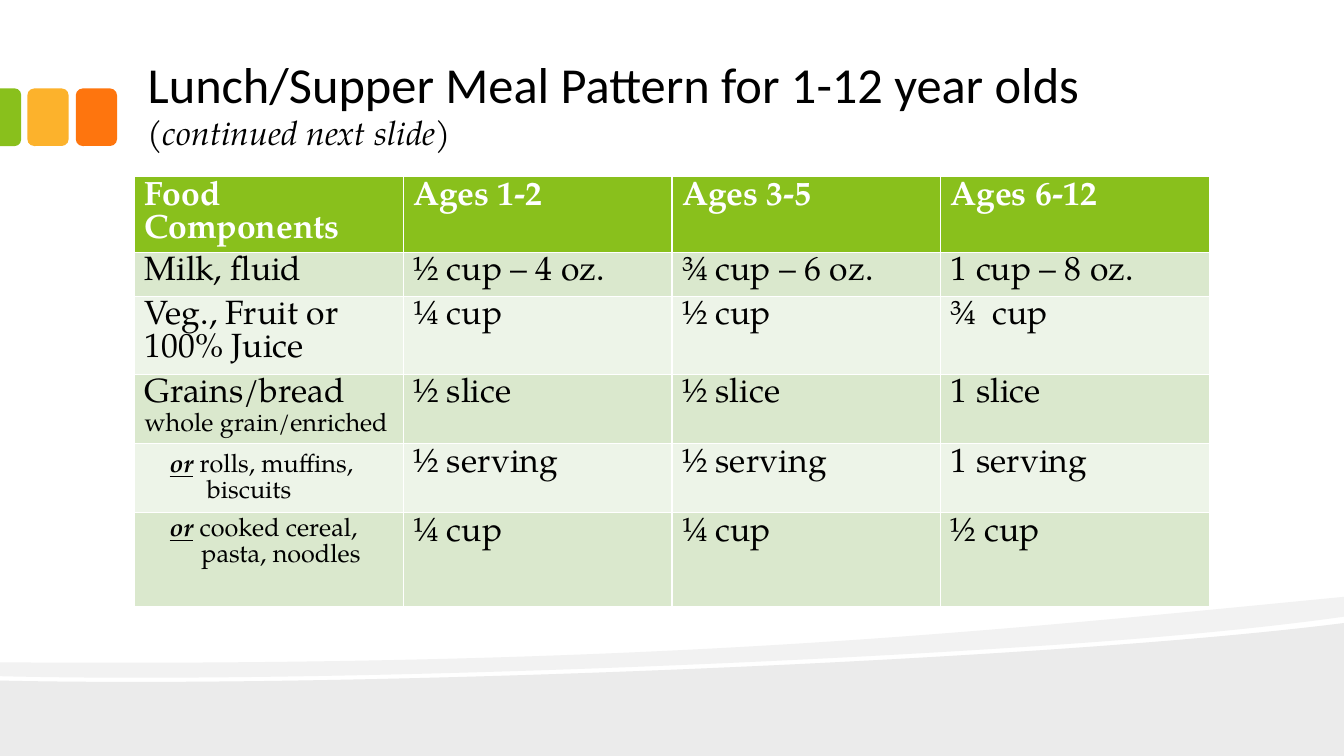
from dataclasses import dataclass
from typing import NamedTuple

from lxml.etree import SubElement as Sub
from pptx import Presentation
from pptx.dml.color import RGBColor as RGB
from pptx.enum.shapes import MSO_SHAPE as Kind
from pptx.enum.text import MSO_ANCHOR as Anchor
from pptx.oxml.ns import qn
from pptx.util import Cm, Pt


@dataclass(frozen=True)
class Theme:
    """Colours, fonts and type sizes of the slide."""
    black: str = "000000"
    white: str = "FFFFFF"
    green: str = "89C01C"
    amber: str = "FCB22C"
    orange: str = "FE750E"
    bands: tuple = ("DAE8CD", "EDF4E8")
    hill: str = "EBEBEB"
    ridge: str = "F2F2F2"
    head: str = "Calibri"
    body: str = "TeX Gyre Pagella"
    title: int = 36
    text: int = 24
    small: int = 18


class Tab(NamedTuple):
    """A coloured tab at the left edge."""
    kind: Kind
    box: tuple
    fill: str
    turn: int = 0


class Line(NamedTuple):
    """A table paragraph, with an optional stressed lead word."""
    text: str
    small: bool = False
    dent: float = 0
    lead: str = ""


class Row(NamedTuple):
    """A table row: height, label lines and one amount per age."""
    high: float
    label: tuple
    ages: tuple


LOOK = Theme()
TABS = (
    Tab(Kind.ROUNDED_RECTANGLE, (1.91, 2.23, 1.04, 1.45), LOOK.orange),
    Tab(Kind.ROUNDED_RECTANGLE, (0.69, 2.23, 1.04, 1.45), LOOK.amber),
    Tab(Kind.ROUND_2_SAME_RECTANGLE, (-0.46, 2.69, 1.45, 0.53), LOOK.green, 90),
)
ROWS = (
    Row(1.89, (Line("Food Components"),), ("Ages 1-2", "Ages 3-5", "Ages 6-12")),
    Row(1.11, (Line("Milk, fluid"),),
        ("½ cup – 4 oz.", "¾ cup – 6 oz.", "1 cup – 8 oz.")),
    Row(1.97, (Line("Veg., Fruit or 100% Juice"),), ("¼ cup", "½ cup", "¾  cup")),
    Row(1.75, (Line("Grains/bread"), Line("whole grain/enriched", True)),
        ("½ slice", "½ slice", "1 slice")),
    Row(1.74, (Line(" rolls, muffins,", dent=0.63, lead="or"),
               Line("biscuits", True, 1.57)),
        ("½ serving", "½ serving", "1 serving")),
    Row(2.36, (Line(" cooked cereal,", True, 0.63, "or"),
               Line("pasta, noodles", True, 1.43)),
        ("¼ cup", "¼ cup", "½ cup")),
)
HILL = [(33.86, 15.7), (33.86, 19.05), (0, 19.05), (0, 17.15),
        ((8.94, 17.35), (26.47, 16.64), (33.86, 15.7))]
RIDGE = [(33.86, 15.04), (33.86, 15.54),
         ((31.88, 15.82), (29.18, 16.08), (26.14, 16.28)),
         ((17.73, 16.84), (6.55, 17.2), (0, 17.04)), (0, 16.69),
         ((16.56, 16.81), (24.66, 15.93), (33.86, 15.04))]


def paint(shape, fill: str) -> None:
    """Give a shape a flat fill without line or shadow."""
    shape.fill.solid()
    shape.fill.fore_color.rgb = RGB.from_string(fill)
    shape.line.fill.background()
    shape.shadow.inherit = False


def draw_wave(slide, parts: list, fill: str) -> None:
    """Draw an outline of corners and cubic curves."""
    ends = [part[-1] if len(part) == 3 else part for part in parts]
    grid = [(round(x * 100), round(y * 100)) for x, y in ends]
    left, top = (min(axis) for axis in zip(*grid))
    pen = slide.shapes.build_freeform(*grid[0], scale=Cm(0.01))
    pen.add_line_segments(grid[1:], close=False)
    shape = pen.convert_to_shape()
    legs = list(shape._element.iter(qn("a:lnTo")))
    for leg, part in zip(legs, parts[1:]):
        if len(part) == 3:
            curve = leg.makeelement(qn("a:cubicBezTo"))
            for x, y in part:
                Sub(curve, qn("a:pt"), x=str(round(x * 100) - left),
                    y=str(round(y * 100) - top))
            leg.getparent().replace(leg, curve)
            last = curve
    Sub(last.getparent(), qn("a:close"))
    paint(shape, fill)


def draw_tab(slide, tab: Tab) -> None:
    """Draw one coloured tab."""
    shape = slide.shapes.add_shape(tab.kind, *map(Cm, tab.box))
    shape.rotation = tab.turn
    if tab.turn:
        shape.adjustments[0] = 0.29
    paint(shape, tab.fill)


def draw_title(slide) -> None:
    """Write the title and its italic remark."""
    box = slide.shapes.add_textbox(Cm(3.39), Cm(0.43), Cm(27.08), Cm(3.59))
    frame = box.text_frame
    frame.word_wrap = True
    frame.vertical_anchor = Anchor.BOTTOM
    frame.margin_left = frame.margin_right = Cm(0.33)
    frame.margin_top = frame.margin_bottom = Cm(0.18)
    para = frame.paragraphs[0]
    para.line_spacing = Pt(28)
    para.font.color.rgb = RGB.from_string(LOOK.black)
    for text, name, size, slant in (
            ("Lunch/Supper Meal Pattern for 1-12 year olds ",
             LOOK.head, LOOK.title, False),
            ("(continued next slide)", LOOK.body, LOOK.text, True)):
        run = para.add_run()
        run.text = text
        run.font.name, run.font.size, run.font.italic = name, Pt(size), slant


def fill_cell(cell, lines: tuple, fill: str, top: bool) -> None:
    """Write the lines of one table cell."""
    cell.fill.solid()
    cell.fill.fore_color.rgb = RGB.from_string(fill)
    for i, line in enumerate(lines):
        frame = cell.text_frame
        para = frame.add_paragraph() if i else frame.paragraphs[0]
        pitch = 18.5 if line.small else 22 if line.lead else 23.5
        para.line_spacing = Pt(pitch)
        small = line.small or line.lead
        font = para.font
        font.name, font.bold = LOOK.body, top
        font.size = Pt(LOOK.small if small else LOOK.text)
        font.color.rgb = RGB.from_string(LOOK.white if top else LOOK.black)
        if line.dent:
            props = para._p.get_or_add_pPr()
            props.set("marL", str(Cm(line.dent)))
            props.set("indent", "0")
        if line.lead:
            run = para.add_run()
            run.text = line.lead
            run.font.bold = run.font.italic = run.font.underline = True
        para.add_run().text = line.text


def draw_table(slide) -> None:
    """Draw the meal table."""
    high = sum(row.high for row in ROWS)
    table = slide.shapes.add_table(
        len(ROWS), 4, Cm(3.39), Cm(4.44), Cm(27.08), Cm(high)).table
    for i, row in enumerate(ROWS):
        table.rows[i].height = Cm(row.high)
        fill = LOOK.bands[(i - 1) % 2] if i else LOOK.green
        cells = (row.label, *((Line(age),) for age in row.ages))
        for j, lines in enumerate(cells):
            fill_cell(table.cell(i, j), lines, fill, i == 0)


def main() -> None:
    """Build the slide and save it."""
    deck = Presentation()
    deck.slide_width, deck.slide_height = Cm(33.86), Cm(19.05)
    slide = deck.slides.add_slide(deck.slide_layouts[6])
    draw_wave(slide, HILL, LOOK.hill)
    draw_wave(slide, RIDGE, LOOK.ridge)
    for tab in TABS:
        draw_tab(slide, tab)
    draw_title(slide)
    draw_table(slide)
    deck.save("out.pptx")


if __name__ == "__main__":
    main()
